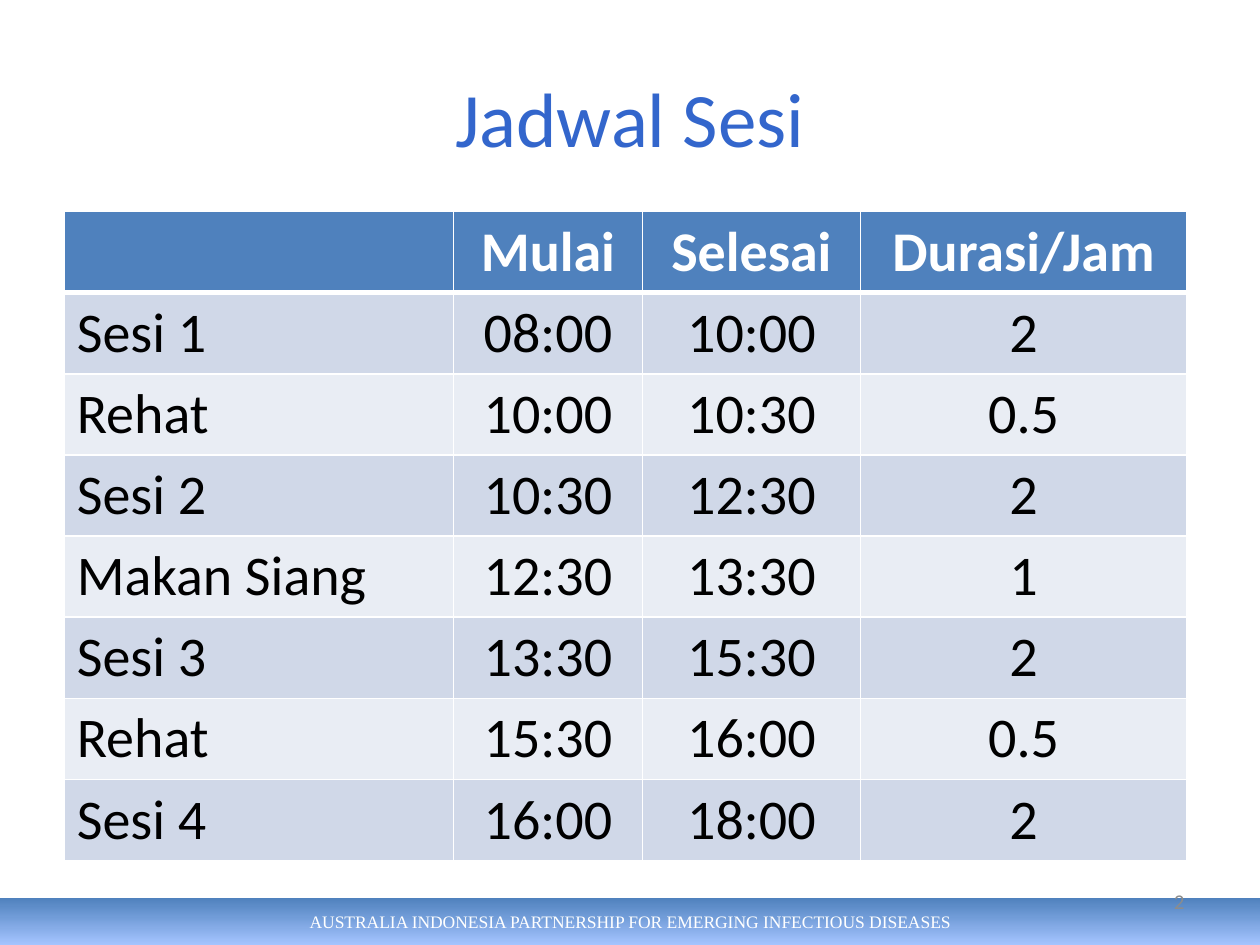
from lxml import etree
from pptx import Presentation
from pptx.dml.color import RGBColor
from pptx.enum.shapes import MSO_SHAPE
from pptx.enum.text import MSO_ANCHOR, PP_ALIGN
from pptx.oxml.ns import qn
from pptx.util import Inches, Pt

LEFT, CENTER, RIGHT = PP_ALIGN.LEFT, PP_ALIGN.CENTER, PP_ALIGN.RIGHT
MIDDLE = MSO_ANCHOR.MIDDLE
RECTANGLE = MSO_SHAPE.RECTANGLE
WIDTH, HEIGHT = 10, 7.5
TITLE_ONLY = 5

SCHEDULE = [
    ("", "Mulai", "Selesai", "Durasi/Jam"),
    ("Sesi 1", "08:00", "10:00", "2"),
    ("Rehat", "10:00", "10:30", "0.5"),
    ("Sesi 2", "10:30", "12:30", "2"),
    ("Makan Siang", "12:30", "13:30", "1"),
    ("Sesi 3", "13:30", "15:30", "2"),
    ("Rehat", "15:30", "16:00", "0.5"),
    ("Sesi 4", "16:00", "18:00", "2"),
]
COLUMN_WIDTHS = [3.09, 1.5, 1.73, 2.59]
ROW_HEIGHT = 0.63


def color(value):
    return RGBColor.from_string(value)


class SlideBuilder:
    font = "Calibri"
    blue, white, black = "4F81BD", "FFFFFF", "000000"
    bands = ("E9EDF4", "D0D8E8")

    def __init__(self, presentation):
        self.slide = presentation.slides.add_slide(presentation.slide_layouts[TITLE_ONLY])

    def set_text(self, frame, text, size, hex_color, align, font=None, bold=False):
        frame.text = text
        frame.word_wrap = True
        for paragraph in frame.paragraphs:
            paragraph.alignment = align
            for run in paragraph.runs:
                run.font.name = font or self.font
                run.font.size = Pt(size)
                run.font.bold = bold
                run.font.color.rgb = color(hex_color)

    def title(self, text, left, top, width, height):
        shape = self.slide.shapes.title
        shape.left, shape.top = Inches(left), Inches(top)
        shape.width, shape.height = Inches(width), Inches(height)
        shape.text_frame.vertical_anchor = MIDDLE
        self.set_text(shape.text_frame, text, 44, "3366CC", CENTER)

    def footer_band(self, text, top):
        shape = self.slide.shapes.add_shape(
            RECTANGLE, 0, Inches(top), Inches(WIDTH), Inches(HEIGHT - top))
        shape.shadow.inherit = False
        shape.line.fill.background()
        shape.fill.gradient()
        shape.fill.gradient_angle = 270
        for stop, hex_color in zip(shape.fill.gradient_stops, (self.blue, "A4C4FF")):
            stop.color.rgb = color(hex_color)
        shape.text_frame.vertical_anchor = MIDDLE
        self.set_text(shape.text_frame, text, 10, self.white, CENTER, "Times New Roman")

    def page_number(self, text, left, top, width, height):
        shape = self.slide.shapes.add_textbox(
            Inches(left), Inches(top), Inches(width), Inches(height))
        shape.text_frame.vertical_anchor = MIDDLE
        self.set_text(shape.text_frame, text, 12, "8C8C8C", RIGHT)

    def borders(self, cell, widths):
        properties = cell._tc.get_or_add_tcPr()
        for side, width in widths.items():
            line = etree.SubElement(properties, qn(f"a:ln{side}"), w=str(Pt(width)))
            fill = etree.SubElement(line, qn("a:solidFill"))
            etree.SubElement(fill, qn("a:srgbClr"), val=self.white)

    def table(self, rows, left, top, column_widths, row_height):
        table = self.slide.shapes.add_table(
            len(rows), len(column_widths), Inches(left), Inches(top),
            Inches(sum(column_widths)), Inches(row_height * len(rows))).table
        for column, width in zip(table.columns, column_widths):
            column.width = Inches(width)
        for row_index, values in enumerate(rows):
            header = row_index == 0
            fill = self.blue if header else self.bands[row_index % 2]
            # The rule under the header is heavier than the others
            widths = {"L": 1, "R": 1, "T": 3 if row_index == 1 else 1, "B": 3 if header else 1}
            for column_index, text in enumerate(values):
                cell = table.cell(row_index, column_index)
                self.borders(cell, widths)
                cell.fill.solid()
                cell.fill.fore_color.rgb = color(fill)
                self.set_text(cell.text_frame, text, 32,
                              self.white if header else self.black,
                              CENTER if column_index else LEFT, bold=header)


def main():
    presentation = Presentation()
    presentation.slide_width, presentation.slide_height = Inches(WIDTH), Inches(HEIGHT)
    builder = SlideBuilder(presentation)

    # Footer band, title, schedule and page number
    builder.footer_band("AUSTRALIA INDONESIA PARTNERSHIP FOR EMERGING INFECTIOUS DISEASES",
                        top=0.95 * HEIGHT)
    builder.title("Jadwal Sesi", 0.05 * WIDTH, 0.04 * HEIGHT, 0.9 * WIDTH, 1.25)
    builder.table(SCHEDULE, 0.51, 1.68, COLUMN_WIDTHS, ROW_HEIGHT)
    builder.page_number("2", 7.17, 6.95, 2.33, 0.4)

    presentation.save("out.pptx")


if __name__ == "__main__":
    main()
